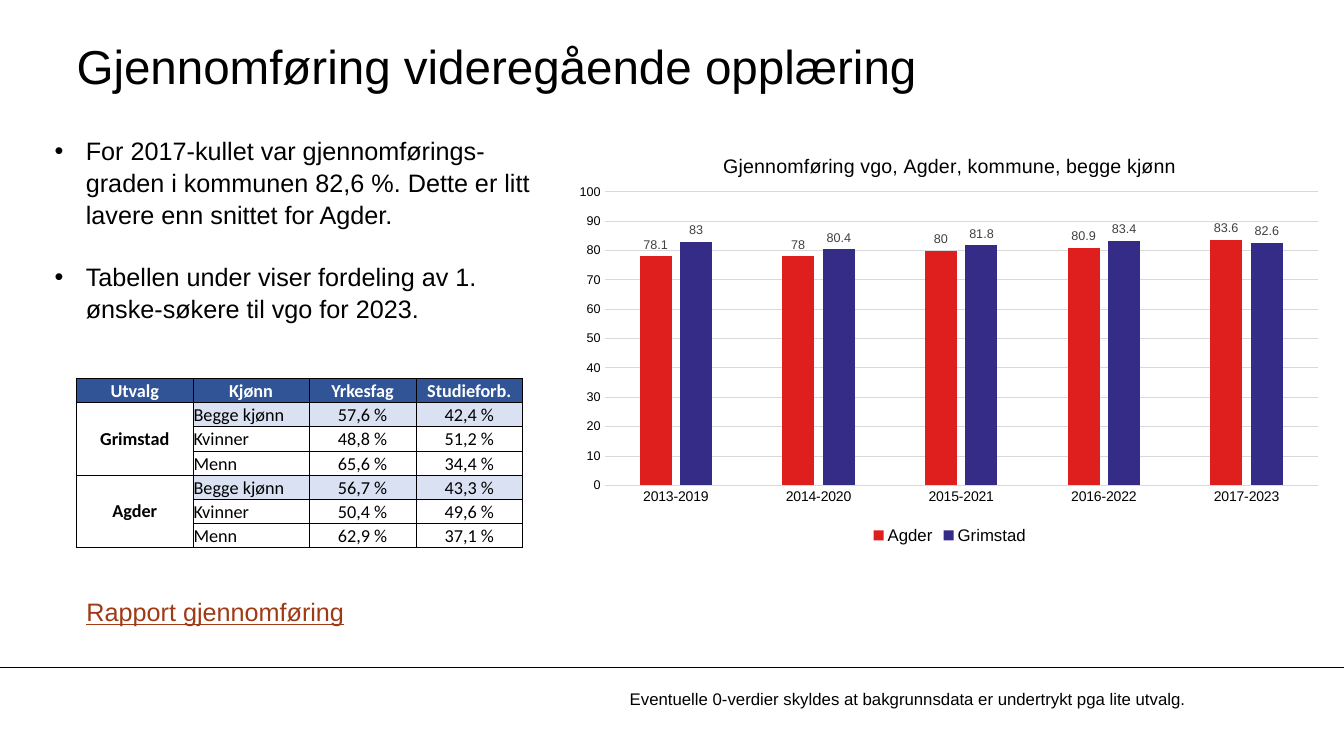
"""Build the slide about completion of upper secondary education."""
from lxml import etree
from pptx import Presentation
from pptx.chart.data import CategoryChartData
from pptx.dml.color import RGBColor
from pptx.enum.chart import XL_CHART_TYPE, XL_LABEL_POSITION, XL_LEGEND_POSITION, XL_TICK_MARK
from pptx.enum.shapes import MSO_CONNECTOR
from pptx.enum.text import MSO_ANCHOR, MSO_AUTO_SIZE, PP_ALIGN
from pptx.oxml import parse_xml
from pptx.oxml.ns import nsdecls, qn
from pptx.util import Cm, Pt

COLUMN = XL_CHART_TYPE.COLUMN_CLUSTERED
OUTSIDE_END = XL_LABEL_POSITION.OUTSIDE_END
LEGEND_BOTTOM = XL_LEGEND_POSITION.BOTTOM
NO_TICK = XL_TICK_MARK.NONE
STRAIGHT = MSO_CONNECTOR.STRAIGHT
MIDDLE, BOTTOM = MSO_ANCHOR.MIDDLE, MSO_ANCHOR.BOTTOM
NO_RESIZE = MSO_AUTO_SIZE.NONE
LEFT, CENTER = PP_ALIGN.LEFT, PP_ALIGN.CENTER

BLACK = RGBColor(0x00, 0x00, 0x00)
WHITE = RGBColor(0xFF, 0xFF, 0xFF)
HEADER_BLUE = RGBColor(0x30, 0x54, 0x96)
TOTAL_BLUE = RGBColor(0xD9, 0xE1, 0xF2)
LINK_BROWN = RGBColor(0x9F, 0x3A, 0x14)
GRID_GRAY = RGBColor(0xD9, 0xD9, 0xD9)
LABEL_GRAY = RGBColor(0x40, 0x40, 0x40)
AGDER_RED = RGBColor(0xDF, 0x1F, 0x1D)
GRIMSTAD_BLUE = RGBColor(0x34, 0x2C, 0x86)

SLIDE_WIDTH, SLIDE_HEIGHT = Cm(33.87), Cm(19.05)
BULLETS = [
    "For 2017-kullet var gjennomførings-graden i kommunen 82,6 %. Dette er litt lavere enn snittet for Agder.",
    "Tabellen under viser fordeling av 1. ønske-søkere til vgo for 2023.",
]
TABLE_ROWS = [
    ["Utvalg", "Kjønn", "Yrkesfag", "Studieforb."],
    ["Grimstad", "Begge kjønn", "57,6 %", "42,4 %"],
    ["", "Kvinner", "48,8 %", "51,2 %"],
    ["", "Menn", "65,6 %", "34,4 %"],
    ["Agder", "Begge kjønn", "56,7 %", "43,3 %"],
    ["", "Kvinner", "50,4 %", "49,6 %"],
    ["", "Menn", "62,9 %", "37,1 %"],
]
COLUMN_WIDTHS = [Cm(2.93), Cm(2.93), Cm(2.69), Cm(2.69)]
ROW_HEIGHT = Cm(0.61)
GROUP_ROWS = (1, 4)
COHORTS = ["2013-2019", "2014-2020", "2015-2021", "2016-2022", "2017-2023"]
SERIES = [
    ("Agder", [78.1, 78, 80, 80.9, 83.6], AGDER_RED),
    ("Grimstad", [83, 80.4, 81.8, 83.4, 82.6], GRIMSTAD_BLUE),
]


def set_font(font, size, color=BLACK, name="Arial", bold=False):
    """Set the look of a font."""
    font.size, font.name, font.bold = Pt(size), name, bold
    font.color.rgb = color


def place(shape, left, top, width, height):
    """Move and size a shape."""
    shape.left, shape.top, shape.width, shape.height = left, top, width, height


def add_title(slide, text):
    """Fill the title placeholder."""
    title = slide.shapes.title
    place(title, Cm(1.93), Cm(0.69), Cm(28.19), Cm(1.9))
    frame = title.text_frame
    frame.text = text
    frame.auto_size, frame.vertical_anchor = NO_RESIZE, MIDDLE
    frame.margin_left = frame.margin_right = frame.margin_top = frame.margin_bottom = 0
    paragraph = frame.paragraphs[0]
    paragraph.alignment = LEFT
    set_font(paragraph.runs[0].font, 34)


def add_bullets(slide, texts):
    """Fill the body placeholder with a bulleted list."""
    body = slide.placeholders[1]
    place(body, Cm(1.12), Cm(3.25), Cm(13.13), Cm(4.88))
    frame = body.text_frame
    frame.text = "\n".join(texts)
    frame.auto_size = NO_RESIZE
    for index, paragraph in enumerate(frame.paragraphs):
        properties = paragraph._p.get_or_add_pPr()
        properties.set("marL", str(Cm(0.79)))
        properties.set("indent", str(-Cm(0.79)))
        paragraph.line_spacing = 1.05
        paragraph.space_before = Pt(21.7 if index else 0)
        set_font(paragraph.runs[0].font, 18)


def add_text(slide, text, left, top, width, height, size, color=BLACK, underline=False):
    """Add a one-line text box."""
    frame = slide.shapes.add_textbox(left, top, width, height).text_frame
    frame.word_wrap = True
    frame.text = text
    font = frame.paragraphs[0].runs[0].font
    set_font(font, size, color)
    font.underline = underline


def add_rule(slide, top):
    """Draw a thin line across the slide."""
    rule = slide.shapes.add_connector(STRAIGHT, 0, top, SLIDE_WIDTH, top)
    rule.line.color.rgb = BLACK
    rule.line.width = Pt(0.75)
    etree.SubElement(rule._element.spPr, qn("a:effectLst"))


def add_borders(cell):
    """Give a cell thin black borders."""
    properties = cell._tc.get_or_add_tcPr()
    for side in ("lnL", "lnR", "lnT", "lnB"):
        properties.append(parse_xml(
            f'<a:{side} {nsdecls("a")} w="{Pt(0.5)}"><a:solidFill>'
            f'<a:srgbClr val="{BLACK}"/></a:solidFill></a:{side}>'))


def format_cell(cell, text, row, column):
    """Write and style one table cell by its position."""
    header, group = row == 0, column == 0
    add_borders(cell)
    cell.fill.solid()
    total = row in GROUP_ROWS and not group
    cell.fill.fore_color.rgb = HEADER_BLUE if header else TOTAL_BLUE if total else WHITE
    cell.margin_left = cell.margin_right = cell.margin_top = Cm(0.02)
    cell.margin_bottom = 0
    cell.vertical_anchor = MIDDLE if group and not header else BOTTOM
    cell.text = text
    paragraph = cell.text_frame.paragraphs[0]
    paragraph.alignment = LEFT if column == 1 and not header else CENTER
    for run in paragraph.runs:
        set_font(run.font, 13, WHITE if header else BLACK, "Calibri", header or group)


def add_applicant_table(slide):
    """Add the table of first-choice applicants."""
    frame = slide.shapes.add_table(
        len(TABLE_ROWS), len(COLUMN_WIDTHS), Cm(1.93), Cm(9.53),
        sum(COLUMN_WIDTHS), ROW_HEIGHT * len(TABLE_ROWS))
    table = frame.table
    table.first_row = table.horz_banding = False
    for column, width in zip(table.columns, COLUMN_WIDTHS):
        column.width = width
    for row, texts in enumerate(TABLE_ROWS):
        table.rows[row].height = ROW_HEIGHT
        for column, text in enumerate(texts):
            format_cell(table.cell(row, column), text, row, column)
    for row in GROUP_ROWS:
        table.cell(row, 0).merge(table.cell(row + 2, 0))


def set_layout(element, **values):
    """Fix the place of a chart part as fractions of the chart."""
    layout = element.get_or_add_layout() if hasattr(element, "get_or_add_layout") else element.find(qn("c:layout"))
    if layout is None:
        layout = etree.Element(qn("c:layout"))
        element.insert(0, layout)
    for child in list(layout):
        layout.remove(child)
    manual = etree.SubElement(layout, qn("c:manualLayout"))
    if "w" in values:
        etree.SubElement(manual, qn("c:layoutTarget")).set("val", "inner")
    for mode in ("xMode", "yMode"):
        etree.SubElement(manual, qn(f"c:{mode}")).set("val", "edge")
    for name, value in values.items():
        etree.SubElement(manual, qn(f"c:{name}")).set("val", str(value))


def format_axes(chart):
    """Style both axes and the gridlines."""
    category, value = chart.category_axis, chart.value_axis
    for axis, size in ((category, 10), (value, 9)):
        axis.major_tick_mark = axis.minor_tick_mark = NO_TICK
        set_font(axis.tick_labels.font, size)
    value.minimum_scale, value.maximum_scale, value.major_unit = 0, 100, 10
    value.tick_labels.number_format = "#,##0"
    value.tick_labels.number_format_is_linked = False
    value.format.line.fill.background()
    for line in (category.format.line, value.major_gridlines.format.line):
        line.color.rgb = GRID_GRAY
        line.width = Pt(0.75)


def add_completion_chart(slide):
    """Add the column chart of completion by cohort."""
    data = CategoryChartData()
    data.categories = COHORTS
    for name, values, _ in SERIES:
        data.add_series(name, values)
    chart = slide.shapes.add_chart(COLUMN, Cm(14.27), Cm(3.25), Cm(19.33), Cm(10.57), data).chart
    set_font(chart.font, 10)
    title = chart.chart_title
    title.text_frame.text = "Gjennomføring vgo, Agder, kommune, begge kjønn"
    set_font(title.text_frame.paragraphs[0].runs[0].font, 14)
    set_layout(title._element, x=0.2, y=0.05)
    chart.has_legend = True
    chart.legend.position = LEGEND_BOTTOM
    chart.legend.include_in_layout = False
    set_font(chart.legend.font, 12)
    format_axes(chart)
    plot = chart.plots[0]
    plot.gap_width, plot.overlap, plot.vary_by_categories = 219, -27, False
    for series, (_, _, color) in zip(plot.series, SERIES):
        series.format.fill.solid()
        series.format.fill.fore_color.rgb = color
        labels = series.data_labels
        labels.show_value, labels.position = True, OUTSIDE_END
        set_font(labels.font, 9, LABEL_GRAY)
    set_layout(chart._chartSpace.chart.plotArea, x=0.05, y=0.15, w=0.93, h=0.7)


def main():
    """Build and save the presentation."""
    presentation = Presentation()
    presentation.slide_width, presentation.slide_height = SLIDE_WIDTH, SLIDE_HEIGHT
    slide = presentation.slides.add_slide(presentation.slide_layouts[1])
    add_rule(slide, Cm(16.81))
    add_title(slide, "Gjennomføring videregående opplæring")
    add_bullets(slide, BULLETS)
    add_applicant_table(slide)
    add_text(slide, "Eventuelle 0-verdier skyldes at bakgrunnsdata er undertrykt pga lite utvalg.",
             Cm(15.62), Cm(17.22), Cm(14.86), Cm(0.76), 12)
    add_text(slide, "Rapport gjennomføring", Cm(1.93), Cm(14.91), Cm(7.14), Cm(1.02), 18, LINK_BROWN, True)
    add_completion_chart(slide)
    presentation.save("out.pptx")


if __name__ == "__main__":
    main()
